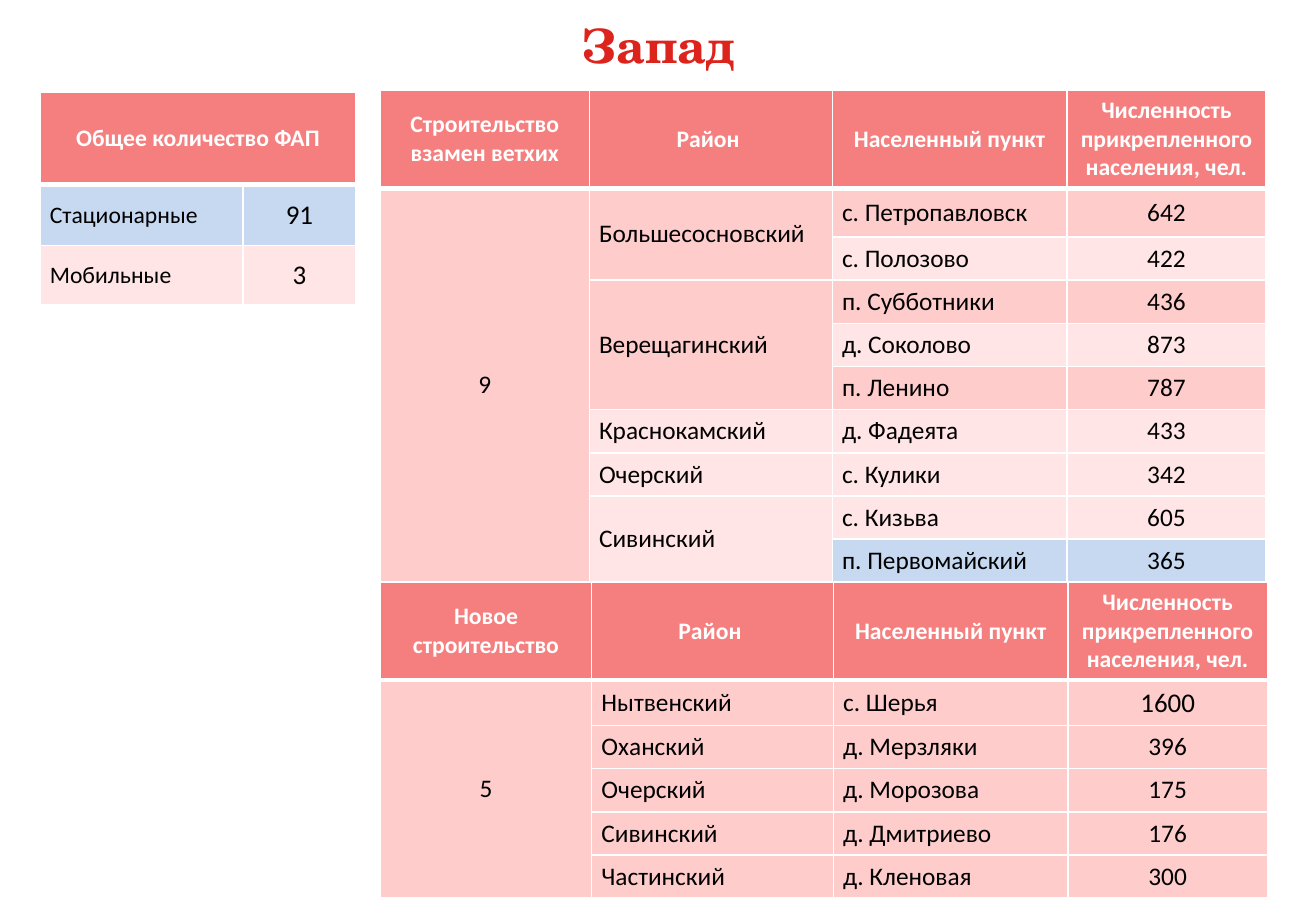
from dataclasses import dataclass
from lxml.etree import SubElement
from pptx import Presentation
from pptx.dml.color import RGBColor
from pptx.enum.text import MSO_ANCHOR, PP_ALIGN
from pptx.oxml import parse_xml
from pptx.oxml.ns import nsdecls
from pptx.util import Inches, Pt


@dataclass(frozen=True)
class Theme:
    title: str = "DC241D"
    head: str = "F57F7F"
    rose: str = "FFCCCC"
    pale: str = "FFE5E5"
    blue: str = "C6D9F1"
    white: str = "FFFFFF"
    black: str = "000000"
    serif: str = "TeX Gyre Schola"
    sans: str = "Calibri"
    title_size: int = 28
    small: int = 14
    body: int = 15
    large: int = 16


theme = Theme()


def style(para, font, size, color, bold, align):
    para.font.name = font
    para.font.size = Pt(size)
    para.font.color.rgb = RGBColor.from_string(color)
    para.font.bold = bold
    para.alignment = align


def border(cell, top, bottom):
    """Draw white lines round a cell; top and bottom are widths in points."""
    props = cell._tc.get_or_add_tcPr()
    for i, (side, width) in enumerate(zip("LRTB", (1, 1, top, bottom))):
        props.insert(i, parse_xml(
            f'<a:ln{side} {nsdecls("a")} w="{Pt(width)}"><a:solidFill>'
            f'<a:srgbClr val="{theme.white}"/></a:solidFill></a:ln{side}>'))


# None marks a cell joined to the one above it, or to its left in a header
heads = ["Район ", "Населенный пункт", "Численность прикрепленного населения, чел."]
total = [
    ["Общее количество ФАП", None],
    ["Стационарные", "91"],
    ["Мобильные", "3"],
]
rebuilt = [
    ["Строительство взамен ветхих", *heads],
    ["9", "Большесосновский", "с. Петропавловск", "642"],
    [None, None, "с. Полозово", "422"],
    [None, "Верещагинский", "п. Субботники", "436"],
    [None, None, "д. Соколово", "873"],
    [None, None, "п. Ленино", "787"],
    [None, "Краснокамский", "д. Фадеята", "433"],
    [None, "Очерский", "с. Кулики", "342"],
    [None, "Сивинский", "с. Кизьва", "605"],
    [None, None, "п. Первомайский", "365"],
]
new = [
    ["Новое строительство", *heads],
    ["5", "Нытвенский", "с. Шерья", "1600"],
    [None, "Оханский", "д. Мерзляки", "396"],
    [None, "Очерский", "д. Морозова", "175"],
    [None, "Сивинский", "д. Дмитриево", "176"],
    [None, "Частинский", "д. Кленовая", "300"],
]
large = {"91", "3", "1600"}
rose, pale, blue = theme.rose, theme.pale, theme.blue

# data, left, top, column widths, row heights, row fills, body size
tables = [
    (total, 0.33, 0.76, [1.67, 0.93], [0.76, 0.5, 0.49], [blue, pale], theme.small),
    (rebuilt, 3.13, 0.74, [1.72, 2, 1.93, 1.64], [0.8, 0.4] + [0.35] * 8,
     [rose, pale, rose, pale, rose, pale, pale, pale, blue], theme.body),
    (new, 3.13, 4.79, [1.74, 1.99, 1.93, 1.64], [0.8, 0.37] + [0.35] * 4,
     [rose] * 5, theme.body),
]

deck = Presentation()
deck.slide_width, deck.slide_height = Inches(10.83), Inches(7.5)
slide = deck.slides.add_slide(deck.slide_layouts[5])

title = slide.shapes.title
title.left, title.top = Inches(0), Inches(0.08)
title.width, title.height = Inches(10.83), Inches(0.58)
title.text_frame.text = "Запад"
title.text_frame.vertical_anchor = MSO_ANCHOR.MIDDLE
style(title.text_frame.paragraphs[0], theme.serif, theme.title_size,
      theme.title, True, PP_ALIGN.CENTER)

for data, left, top, widths, heights, tones, size in tables:
    table = slide.shapes.add_table(
        len(data), len(widths), Inches(left), Inches(top),
        Inches(sum(widths)), Inches(sum(heights))).table
    table.horz_banding = False
    for col, width in zip(table.columns, widths):
        col.width = Inches(width)
    for row, height in zip(table.rows, heights):
        row.height = Inches(height)

    for r, line in enumerate(data):
        for c, text in enumerate(line):
            cell = table.cell(r, c)
            cell.margin_left = cell.margin_right = Inches(0.08)
            cell.vertical_anchor = MSO_ANCHOR.MIDDLE
            first = r
            while first and data[first][c] is None:
                first -= 1
            tone = tones[first - 1] if first else theme.head
            cell.fill.solid()
            cell.fill.fore_color.rgb = RGBColor.from_string(tone)
            border(cell, 3 if r == 1 else 1, 3 if r == 0 else 1)
            cell.text = text or ""
            para = cell.text_frame.paragraphs[0]
            if r == 0:
                style(para, theme.sans, theme.small, theme.white, True, PP_ALIGN.CENTER)
            else:
                number = (text or "").isdigit()
                style(para, theme.sans, theme.large if text in large else size,
                      theme.black, False, PP_ALIGN.CENTER if number else PP_ALIGN.LEFT)

    for c in range(len(widths)):
        if data[0][c] is None:
            table.cell(0, c - 1).merge(table.cell(0, c))
        starts = [r for r in range(1, len(data)) if data[r][c]] + [len(data)]
        for r, end in zip(starts, starts[1:]):
            if end - r > 1:
                table.cell(r, c).merge(table.cell(end - 1, c))

deck.save("out.pptx")
